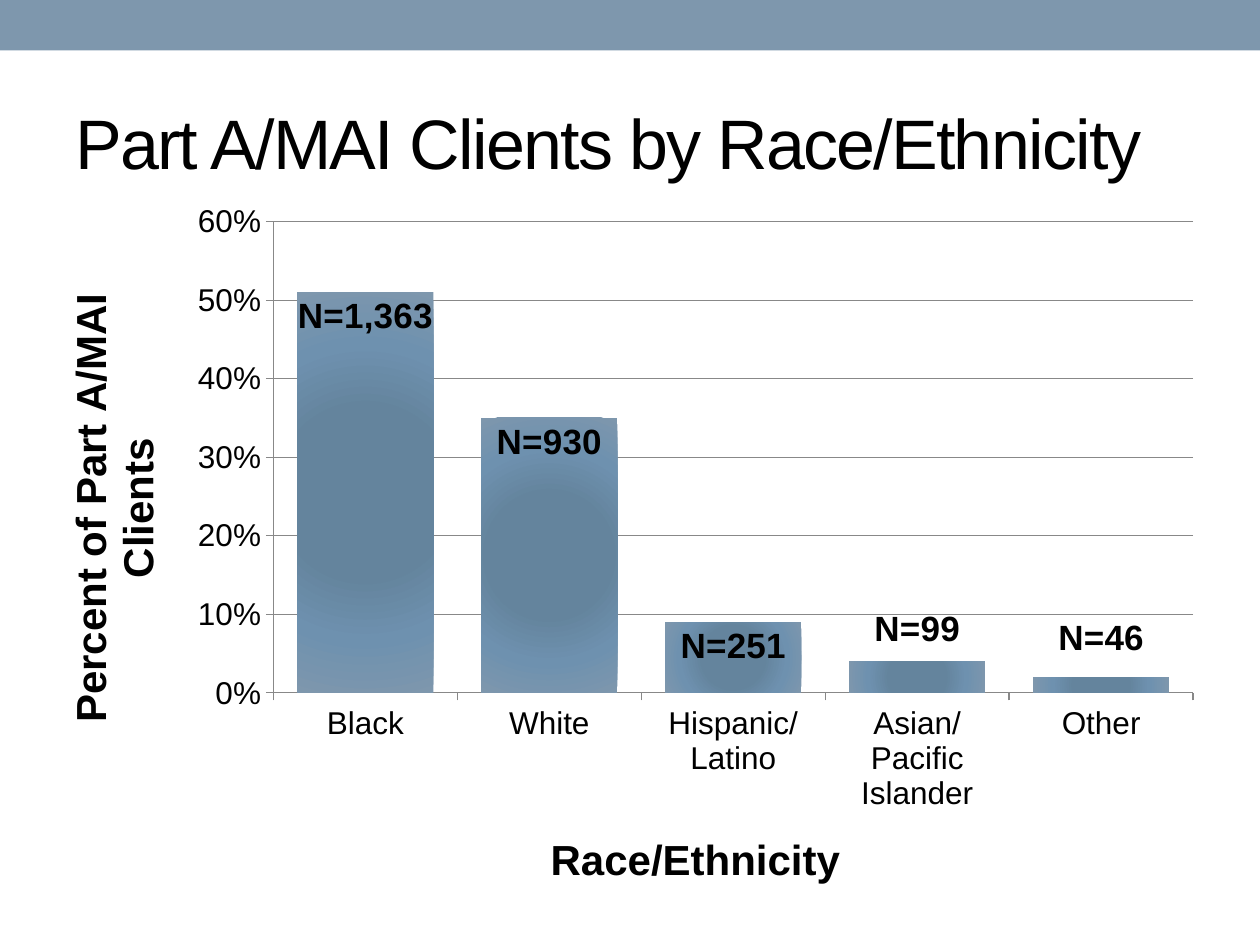
from lxml import etree
from pptx import Presentation
from pptx.chart.data import CategoryChartData
from pptx.dml.color import RGBColor
from pptx.enum.chart import XL_CHART_TYPE, XL_LABEL_POSITION, XL_TICK_MARK
from pptx.enum.shapes import MSO_SHAPE
from pptx.enum.text import MSO_ANCHOR
from pptx.oxml import parse_xml
from pptx.oxml.ns import nsdecls, qn
from pptx.util import Inches, Pt

STACKED = XL_CHART_TYPE.COLUMN_STACKED
INSIDE_END = XL_LABEL_POSITION.INSIDE_END
OUTSIDE = XL_TICK_MARK.OUTSIDE
RECT = MSO_SHAPE.RECTANGLE
MIDDLE = MSO_ANCHOR.MIDDLE

THEME = {
    "font": "Arial",
    "text": RGBColor(0, 0, 0),
    "band": RGBColor.from_string("7E97AD"),
    "grid": RGBColor.from_string("888888"),
    "bar": [(0, "62829B"), (40, "64849D"), (70, "6E91AF"), (100, "7E97AD")],
    "title": Pt(40),
    "axis_title": Pt(24),
    "label": Pt(20),
    "body": Pt(18),
}
CLIENTS = {
    "Black": 1363,
    "White": 930,
    "Hispanic/Latino": 251,
    "Asian/Pacific Islander": 99,
    "Other": 46,
}
CHART_W, CHART_H = Inches(9.41), Inches(5.79)
LABEL_SHIFT = {3: -0.45, 4: -0.5}  # inches, lifts labels above the short bars


def style(font, size, bold=False):
    font.name = THEME["font"]
    font.size = size
    font.bold = bold
    font.color.rgb = THEME["text"]


def set_layout(parent, after, modes, **inches):
    """Place a chart part; lengths become fractions of the chart size."""
    for old in parent.findall(qn("c:layout")):
        parent.remove(old)
    layout = etree.Element(qn("c:layout"))
    manual = etree.SubElement(layout, qn("c:manualLayout"))
    for name, value in modes.items():
        etree.SubElement(manual, qn("c:" + name)).set("val", value)
    for name, value in inches.items():
        share = Inches(value) / (CHART_W if name in "xw" else CHART_H)
        etree.SubElement(manual, qn("c:" + name)).set("val", str(share))
    if after is None:
        parent.insert(0, layout)
    else:
        parent.find(qn(after)).addnext(layout)


prs = Presentation()
prs.slide_width, prs.slide_height = Inches(10), Inches(7.5)
s = prs.slides.add_slide(prs.slide_layouts[6])

# Top band
sp = s.shapes.add_shape(RECT, 0, 0, prs.slide_width, Inches(0.4))
sp.shadow.inherit = False
sp.fill.solid()
sp.fill.fore_color.rgb = THEME["band"]
sp.line.fill.background()

# Title
sp = s.shapes.add_textbox(Inches(0.5), Inches(0.58), Inches(9.25), Inches(1.08))
tf = sp.text_frame
tf.word_wrap = True
tf.vertical_anchor = MIDDLE
p = tf.paragraphs[0]
r = p.add_run()
r.text = "Part A/MAI Clients by Race/Ethnicity"
style(p.font, THEME["title"])
r.font._element.set("spc", "-100")

# Chart: each group's share of all clients
total = sum(CLIENTS.values())
data = CategoryChartData(number_format="0%")
data.categories = list(CLIENTS)
data.add_series("Series 1", [round(n / total, 2) for n in CLIENTS.values()])
chart = s.shapes.add_chart(STACKED, Inches(0.25), Inches(1.5), CHART_W, CHART_H,
                           data).chart
chart.has_legend = False
chart.has_title = False
style(chart.font, THEME["body"])
plot = chart.plots[0]
plot.gap_width, plot.overlap = 35, 100
plot.vary_by_categories = False
edge = {"xMode": "edge", "yMode": "edge"}
plot_area = chart._chartSpace.find(qn("c:chart")).find(qn("c:plotArea"))
set_layout(plot_area, None, {"layoutTarget": "inner", **edge},
           x=1.92, y=0.26, w=7.3, h=3.74)

# Axes
for axis, title, x, y in (
    (chart.category_axis, "Race/Ethnicity", 4.06, 5.05),
    (chart.value_axis, "Percent of Part A/MAI Clients", 0.19, 0.77),
):
    axis.major_tick_mark = OUTSIDE
    axis.format.line.color.rgb = THEME["grid"]
    p = axis.axis_title.text_frame.paragraphs[0]
    p.text = title
    style(p.font, THEME["axis_title"], True)
    set_layout(axis.axis_title._element, "c:tx", edge, x=x, y=y)
axis = chart.value_axis
axis.axis_title.text_frame._txBody.bodyPr.set("rot", "-5400000")
axis.minimum_scale, axis.maximum_scale, axis.major_unit = 0, 0.6, 0.1
axis.tick_labels.number_format = "0%"
axis.tick_labels.number_format_is_linked = False
axis.has_major_gridlines = True
axis.major_gridlines.format.line.color.rgb = THEME["grid"]

# Bars with a radial gradient
series = plot.series[0]
series.format.fill.solid()
stops = "".join(f'<a:gs pos="{pos * 1000}"><a:srgbClr val="{color}"/></a:gs>'
                for pos, color in THEME["bar"])
gradient = parse_xml(
    f'<a:gradFill {nsdecls("a")} rotWithShape="1"><a:gsLst>{stops}</a:gsLst>'
    '<a:path path="circle"><a:fillToRect l="50000" t="50000" r="50000" b="50000"/>'
    "</a:path></a:gradFill>")
sp_pr = series._element.find(qn("c:spPr"))
sp_pr.replace(sp_pr.find(qn("a:solidFill")), gradient)

# Client counts on the bars
for i, n in enumerate(CLIENTS.values()):
    label = series.points[i].data_label
    r = label.text_frame.paragraphs[0].add_run()
    r.text = f"N={n:,}"
    style(r.font, THEME["label"], True)
    label.position = INSIDE_END
for i, d_lbl in enumerate(series._element.iter(qn("c:dLbl"))):
    if i in LABEL_SHIFT:
        set_layout(d_lbl, "c:idx", {}, x=0, y=LABEL_SHIFT[i])

# No leader lines to the lifted labels
d_lbls = series._element.find(qn("c:dLbls"))
for leader in d_lbls.findall(qn("c:showLeaderLines")):
    leader.set("val", "0")
d_lbls.append(parse_xml(
    f'<c:extLst {nsdecls("c")}><c:ext uri="{{CE6537A1-D6FC-4f65-9D91-7224C49458BB}}" '
    'xmlns:c15="http://schemas.microsoft.com/office/drawing/2012/chart">'
    '<c15:showLeaderLines val="0"/></c:ext></c:extLst>'))

prs.save("out.pptx")
